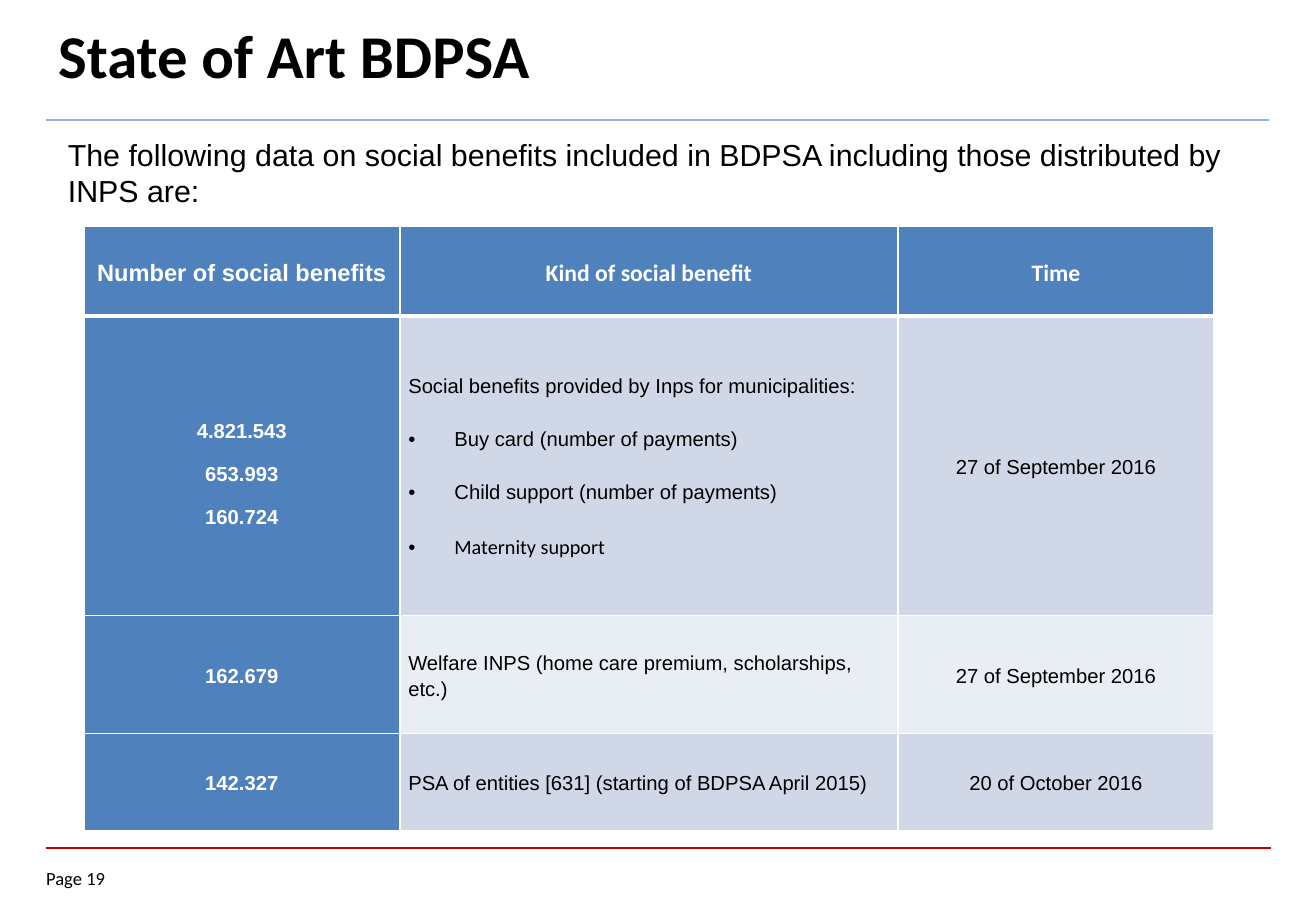
from lxml import etree
from pptx import Presentation
from pptx.dml.color import RGBColor
from pptx.enum.shapes import MSO_CONNECTOR
from pptx.enum.text import MSO_ANCHOR, PP_ALIGN
from pptx.oxml.ns import qn
from pptx.util import Inches, Pt

CENTER, LEFT = PP_ALIGN.CENTER, PP_ALIGN.LEFT
TOP, MIDDLE = MSO_ANCHOR.TOP, MSO_ANCHOR.MIDDLE
STRAIGHT = MSO_CONNECTOR.STRAIGHT

WIDTH, HEIGHT = 10.83, 7.5
BLACK, WHITE, BLUE = "000000", "FFFFFF", "4F81BD"
BANDS = ["D0D8E8", "E9EDF4"]
COLS = [2.6, 4.1, 2.6]
ROWS = [0.74, 2.47, 0.97, 0.8]
DATA = [
    ["Number of social benefits", "Kind of social benefit", "Time"],
    ["4.821.543\n653.993\n160.724",
     "Social benefits provided by Inps for municipalities:\n"
     "Buy card (number of payments)\nChild support (number of payments)\n"
     "Maternity support",
     "27 of September 2016"],
    ["162.679", "Welfare INPS (home care premium, scholarships, etc.)",
     "27 of September 2016"],
    ["142.327", "PSA of entities [631] (starting of BDPSA April 2015)",
     "20 of October 2016"],
]
LIGHT = {"Kind of social benefit", "Time", "Maternity support"}


def paint(text):
    return RGBColor.from_string(text)


def style(para, size, name, color=BLACK, bold=False):
    for run in para.runs:
        font = run.font
        font.size, font.name, font.bold = Pt(size), name, bold
        font.color.rgb = paint(color)


def label(slide, box, text, size, name, bold=False, anchor=TOP, inset=(0.1, 0.05)):
    frame = slide.shapes.add_textbox(*map(Inches, box)).text_frame
    frame.word_wrap = True
    frame.vertical_anchor = anchor
    frame.margin_left = frame.margin_right = Inches(inset[0])
    frame.margin_top = frame.margin_bottom = Inches(inset[1])
    frame.text = text
    style(frame.paragraphs[0], size, name, bold=bold)


def rule(slide, left, top, width, color, weight):
    line = slide.shapes.add_connector(
        STRAIGHT, *map(Inches, (left, top, left + width, top)))
    line.line.color.rgb = paint(color)
    line.line.width = Pt(weight)
    etree.SubElement(line._element.spPr, qn("a:effectLst"))


def edge(cell, head, below):
    """Draw white cell borders, thick between the header and the body."""
    props = cell._tc.get_or_add_tcPr()
    thick = {"lnB": head, "lnT": below}
    for spot, side in enumerate(["lnL", "lnR", "lnT", "lnB"]):
        weight = Pt(3 if thick.get(side) else 1)
        line = etree.Element(qn("a:" + side), w=str(weight))
        fill = etree.SubElement(line, qn("a:solidFill"))
        etree.SubElement(fill, qn("a:srgbClr"), val=WHITE)
        props.insert(spot, line)


def bullet(para):
    props = para._p.get_or_add_pPr()
    props.set("marL", str(Inches(0.38)))
    props.set("indent", str(-Inches(0.38)))
    etree.SubElement(props, qn("a:buFont"), typeface="Arial")
    etree.SubElement(props, qn("a:buChar"), char="•")


def write(cell, text, row, col):
    frame = cell.text_frame
    frame.text = text
    strong = row == 0 or col == 0
    listed = col == 1 and row > 0
    last = len(frame.paragraphs) - 1
    for spot, para in enumerate(frame.paragraphs):
        para.alignment = LEFT if listed else CENTER
        para.line_spacing = 1.15
        if spot < last:
            para.space_after = Pt(16 if listed else 10)
        if listed and spot:
            bullet(para)
        style(para, 12 if row else 14,
              "Calibri" if para.text in LIGHT else "Arial",
              WHITE if strong else BLACK, strong)


def grid(slide, left, top, width, height):
    table = slide.shapes.add_table(
        len(ROWS), len(COLS), *map(Inches, (left, top, width, height))).table
    for col, part in enumerate(COLS):
        table.columns[col].width = Inches(width * part / sum(COLS))
    for row, part in enumerate(ROWS):
        table.rows[row].height = Inches(height * part / sum(ROWS))
        for col, text in enumerate(DATA[row]):
            cell = table.cell(row, col)
            cell.margin_left = cell.margin_right = Inches(0.07)
            cell.margin_top = Inches(0.12 if "\n" in text and col == 0 else 0)
            cell.margin_bottom = 0
            cell.vertical_anchor = MIDDLE
            cell.fill.solid()
            strong = row == 0 or col == 0
            cell.fill.fore_color.rgb = paint(BLUE if strong else BANDS[(row - 1) % 2])
            edge(cell, row == 0, row == 1)
            write(cell, text, row, col)


def header(slide, left, top, width):
    label(slide, (left, top, width, 0.71), "State of Art BDPSA", 36, "Calibri",
          bold=True, anchor=MIDDLE)
    rule(slide, left, top + 0.9, 10.06, "8EB4E3", 1.5)
    label(slide, (left + 0.08, top + 0.98, width, 0.71),
          "The following data on social benefits included in BDPSA including "
          "those distributed by INPS are:", 18, "Arial")


def footer(slide, left, top, width):
    rule(slide, left, top, width, "C00000", 1)
    label(slide, (left, top + 0.16, 0.73, 0.22), "Page 19", 11, "Calibri",
          inset=(0, 0))


def main():
    deck = Presentation()
    deck.slide_width, deck.slide_height = Inches(WIDTH), Inches(HEIGHT)
    slide = deck.slides.add_slide(deck.slide_layouts[6])
    header(slide, 0.38, 0.09, 9.92)
    grid(slide, 0.69, 1.86, 9.3, 4.98)
    footer(slide, 0.38, 6.98, 10.08)
    deck.save("out.pptx")


if __name__ == "__main__":
    main()
